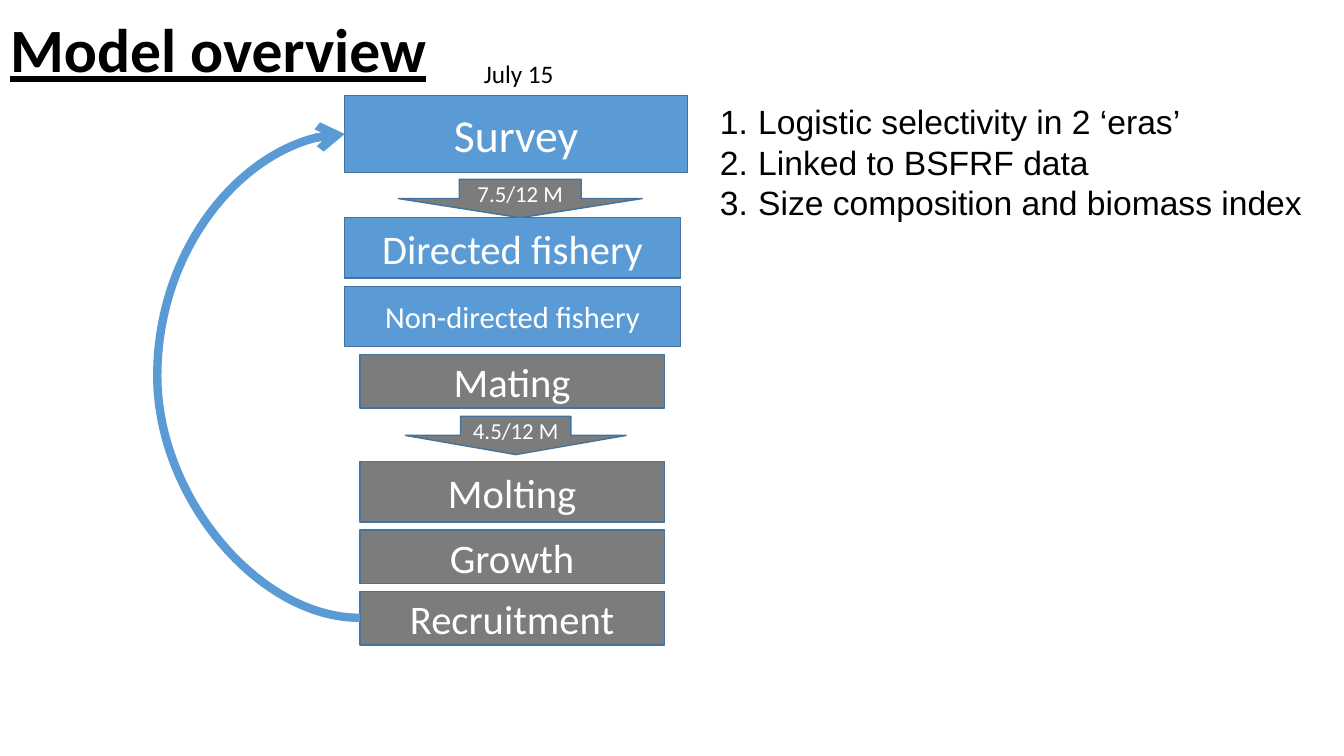
from lxml import etree
from pptx import Presentation
from pptx.dml.color import RGBColor
from pptx.enum.shapes import MSO_CONNECTOR, MSO_SHAPE
from pptx.enum.text import MSO_ANCHOR, MSO_AUTO_SIZE, PP_ALIGN
from pptx.oxml.ns import qn
from pptx.util import Inches, Pt

RECT, DOWN_ARROW = MSO_SHAPE.RECTANGLE, MSO_SHAPE.DOWN_ARROW
CURVE = MSO_CONNECTOR.CURVE
MIDDLE, TOP = MSO_ANCHOR.MIDDLE, MSO_ANCHOR.TOP
LEFT, CENTER = PP_ALIGN.LEFT, PP_ALIGN.CENTER
NO_AUTOFIT = MSO_AUTO_SIZE.NONE

BLUE, GRAY, OUTLINE = "5B9BD5", "7C7C7C", "43739E"
WHITE, BLACK = "FFFFFF", "000000"

# Steps of the yearly cycle: text, shape, left, top, width, height, fill, size
STEPS = [
    ("Survey", RECT, 3.42, 0.95, 3.4, 0.76, BLUE, 32.6),
    ("7.5/12 M", DOWN_ARROW, 3.95, 1.78, 2.42, 0.38, GRAY, 16.3),
    ("Directed fishery", RECT, 3.42, 2.16, 3.33, 0.6, BLUE, 29),
    ("Non-directed fishery", RECT, 3.42, 2.84, 3.33, 0.6, BLUE, 21.8),
    ("Mating", RECT, 3.57, 3.52, 3.02, 0.53, GRAY, 29),
    ("4.5/12 M", DOWN_ARROW, 4.02, 4.13, 2.19, 0.38, GRAY, 16.3),
    ("Molting", RECT, 3.57, 4.58, 3.02, 0.6, GRAY, 29),
    ("Growth", RECT, 3.57, 5.26, 3.02, 0.53, GRAY, 29),
    ("Recruitment", RECT, 3.57, 5.87, 3.02, 0.53, GRAY, 29),
]
SURVEY_NOTES = [
    "Logistic selectivity in 2 ‘eras’",
    "Linked to BSFRF data",
    "Size composition and biomass index",
]


def color(hex_string):
    return RGBColor.from_string(hex_string)


def place(shape, left, top, width, height):
    shape.left, shape.top = Inches(left), Inches(top)
    shape.width, shape.height = Inches(width), Inches(height)


def format_paragraph(paragraph, size, hex_color, name="Calibri", align=LEFT):
    paragraph.alignment = align
    paragraph.font.size = Pt(size)
    paragraph.font.name = name
    paragraph.font.color.rgb = color(hex_color)


def add_title(slide, text):
    title = slide.shapes.title
    place(title, 0, -0.2, 11.5, 1.45)
    frame = title.text_frame
    frame.text = text
    frame.auto_size = NO_AUTOFIT
    frame.vertical_anchor = MIDDLE
    heading = frame.paragraphs[0]
    format_paragraph(heading, 44, BLACK)
    heading.line_spacing = 0.9
    heading.font.bold = heading.font.underline = True


def add_numbered_list(slide, items):
    body = slide.placeholders[1]
    place(body, 7.04, 0.95, 6.16, 1.31)
    frame = body.text_frame
    frame.text = "\n".join(items)
    frame.auto_size = NO_AUTOFIT
    frame.vertical_anchor = TOP
    for item in frame.paragraphs:
        format_paragraph(item, 24, BLACK, "Arial")
        item.space_before = Pt(0)
        item.line_spacing = Pt(29)
        # Hanging indent and automatic number
        properties = item._p.get_or_add_pPr()
        properties.set("marL", str(Inches(0.38)))
        properties.set("indent", str(-Inches(0.38)))
        number_font = etree.Element(qn("a:buFont"), typeface="Arial")
        numbering = etree.Element(qn("a:buAutoNum"), type="arabicPeriod")
        spacing_end = properties.find(qn("a:spcBef"))
        spacing_end.addnext(number_font)
        number_font.addnext(numbering)


def add_date(slide, text):
    date = slide.shapes.add_textbox(
        Inches(4.7), Inches(0.53), Inches(2.34), Inches(0.42))
    date.text_frame.word_wrap = True
    date.text_frame.text = text
    format_paragraph(date.text_frame.paragraphs[0], 18, BLACK)


def add_step(slide, text, kind, left, top, width, height, fill, size):
    step = slide.shapes.add_shape(
        kind, Inches(left), Inches(top), Inches(width), Inches(height))
    step.shadow.inherit = False
    step.fill.solid()
    step.fill.fore_color.rgb = color(fill)
    step.line.color.rgb = color(OUTLINE)
    step.line.width = Pt(1)
    step.text_frame.text = text
    step.text_frame.vertical_anchor = MIDDLE
    format_paragraph(step.text_frame.paragraphs[0], size, WHITE, align=CENTER)


def add_return_arrow(slide):
    arrow = slide.shapes.add_connector(
        CURVE, Inches(3.57), Inches(6.13), Inches(3.42), Inches(1.33))
    arrow.line.color.rgb = color(BLUE)
    arrow.line.width = Pt(6)
    properties = arrow._element.spPr
    # Bulge of the curve, as a multiple of the connector's width
    adjustments = properties.find(qn("a:prstGeom")).find(qn("a:avLst"))
    etree.SubElement(adjustments, qn("a:gd"), name="adj1", fmla="val 1340000")
    etree.SubElement(properties.find(qn("a:ln")), qn("a:tailEnd"), type="arrow")
    etree.SubElement(properties, qn("a:effectLst"))


def main():
    deck = Presentation()
    deck.slide_width, deck.slide_height = Inches(13.33), Inches(7.5)
    slide = deck.slides.add_slide(deck.slide_layouts[1])

    # Heading and notes on the survey
    add_title(slide, "Model overview")
    add_numbered_list(slide, SURVEY_NOTES)

    # Yearly cycle
    add_date(slide, "July 15")
    for step in STEPS:
        add_step(slide, *step)
    add_return_arrow(slide)

    deck.save("out.pptx")


if __name__ == "__main__":
    main()
